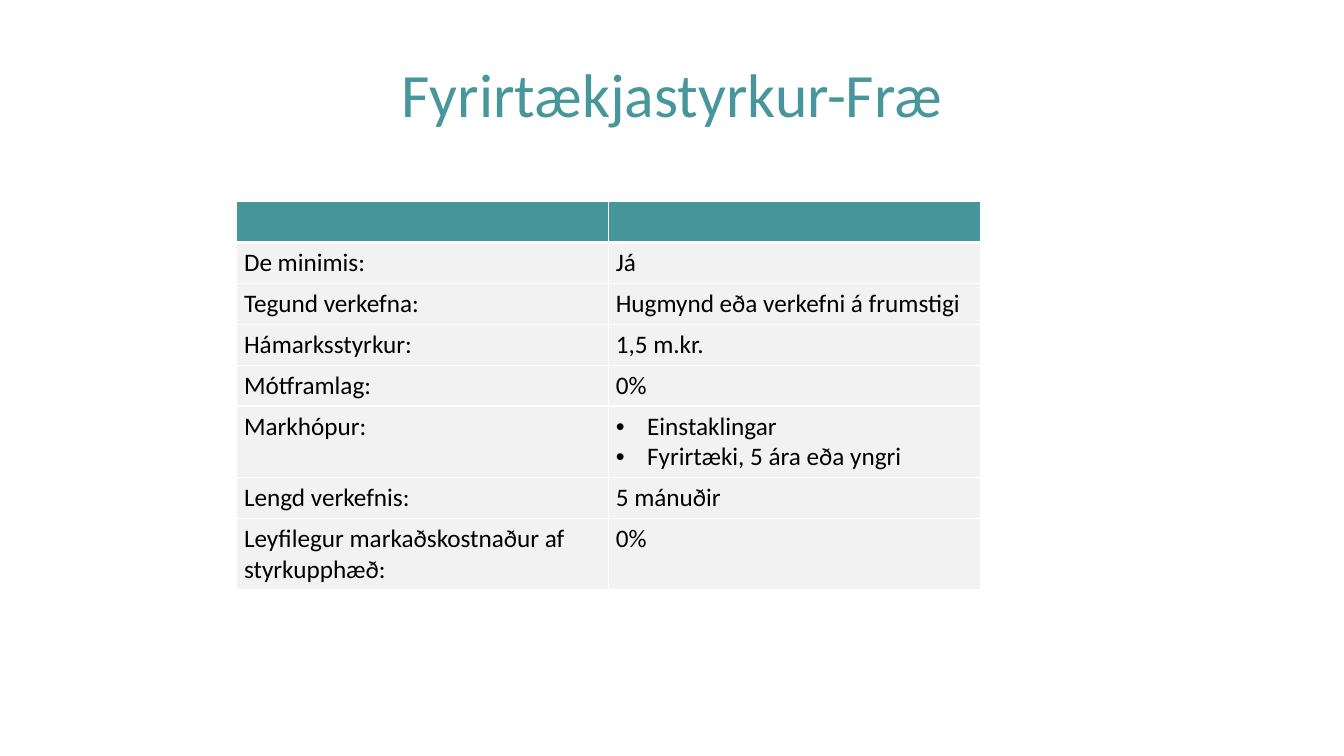
from lxml.etree import SubElement
from pptx import Presentation
from pptx.dml.color import RGBColor
from pptx.enum.text import MSO_ANCHOR, PP_ALIGN
from pptx.oxml.ns import qn
from pptx.util import Cm, Pt

COLORS = {"teal": "46969B", "row": "F2F2F2", "text": "000000", "white": "FFFFFF"}
GRANT_TERMS = [
    ("", [""]),
    ("De minimis:", ["Já"]),
    ("Tegund verkefna:", ["Hugmynd eða verkefni á frumstigi"]),
    ("Hámarksstyrkur:", ["1,5 m.kr."]),
    ("Mótframlag:", ["0%"]),
    ("Markhópur:", ["Einstaklingar", "Fyrirtæki, 5 ára eða yngri"]),
    ("Lengd verkefnis:", ["5 mánuðir"]),
    ("Leyfilegur markaðskostnaður af styrkupphæð:", ["0%"]),
]
CELL_FORMAT = {
    "margin_left": Cm(0.18),
    "margin_right": Cm(0.18),
    "margin_top": Cm(0.13),
    "margin_bottom": Cm(0.13),
    "vertical_anchor": MSO_ANCHOR.TOP,
}


def style_font(paragraph, size, color):
    for name, value in {"name": "Calibri", "size": Pt(size)}.items():
        setattr(paragraph.font, name, value)
    paragraph.font.color.rgb = RGBColor.from_string(COLORS[color])


def add_borders(cell, widths):
    """Draw white cell borders; widths maps each side (L, R, T, B) to points."""
    properties = cell._tc.get_or_add_tcPr()
    for side, width in widths.items():
        line = SubElement(properties, qn(f"a:ln{side}"), w=str(Pt(width)))
        fill = SubElement(line, qn("a:solidFill"))
        SubElement(fill, qn("a:srgbClr"), val=COLORS["white"])


presentation = Presentation()
presentation.slide_width = Cm(33.87)
presentation.slide_height = Cm(19.05)
slide = presentation.slides.add_slide(presentation.slide_layouts[6])

title = slide.shapes.add_textbox(Cm(1.7), Cm(0.76), Cm(30.48), Cm(3.18))
title.fill.solid()
title.fill.fore_color.rgb = RGBColor.from_string(COLORS["white"])
title.text_frame.word_wrap = True
title.text_frame.vertical_anchor = MSO_ANCHOR.MIDDLE
heading = title.text_frame.paragraphs[0]
heading.text = "Fyrirtækjastyrkur-Fræ"
heading.alignment = PP_ALIGN.CENTER
style_font(heading, 44, "teal")

terms = slide.shapes.add_table(
    len(GRANT_TERMS), 2, Cm(5.97), Cm(5.08), Cm(18.74), Cm(8.24)
).table
for column in terms.columns:
    column.width = Cm(9.37)

for row_index, (label, values) in enumerate(GRANT_TERMS):
    is_header = row_index == 0
    two_lines = len(values) > 1 or len(label) > 30
    terms.rows[row_index].height = Cm(1.8 if two_lines else 1.03)
    borders = {
        "L": 1,
        "R": 1,
        "T": 3 if row_index == 1 else 1,
        "B": 3 if is_header else 1,
    }
    for column_index, lines in enumerate([[label], values]):
        cell = terms.cell(row_index, column_index)
        for name, value in CELL_FORMAT.items():
            setattr(cell, name, value)
        add_borders(cell, borders)
        cell.fill.solid()
        cell.fill.fore_color.rgb = RGBColor.from_string(
            COLORS["teal" if is_header else "row"]
        )
        cell.text = "\n".join(lines)
        for paragraph in cell.text_frame.paragraphs:
            if len(lines) > 1:
                bullet = paragraph._p.get_or_add_pPr()
                bullet.set("marL", str(Cm(0.79)))
                bullet.set("indent", str(-Cm(0.79)))
                SubElement(bullet, qn("a:buFont"), typeface="Arial")
                SubElement(bullet, qn("a:buChar"), char="•")
            style_font(paragraph, 18, "text")

presentation.save("out.pptx")
